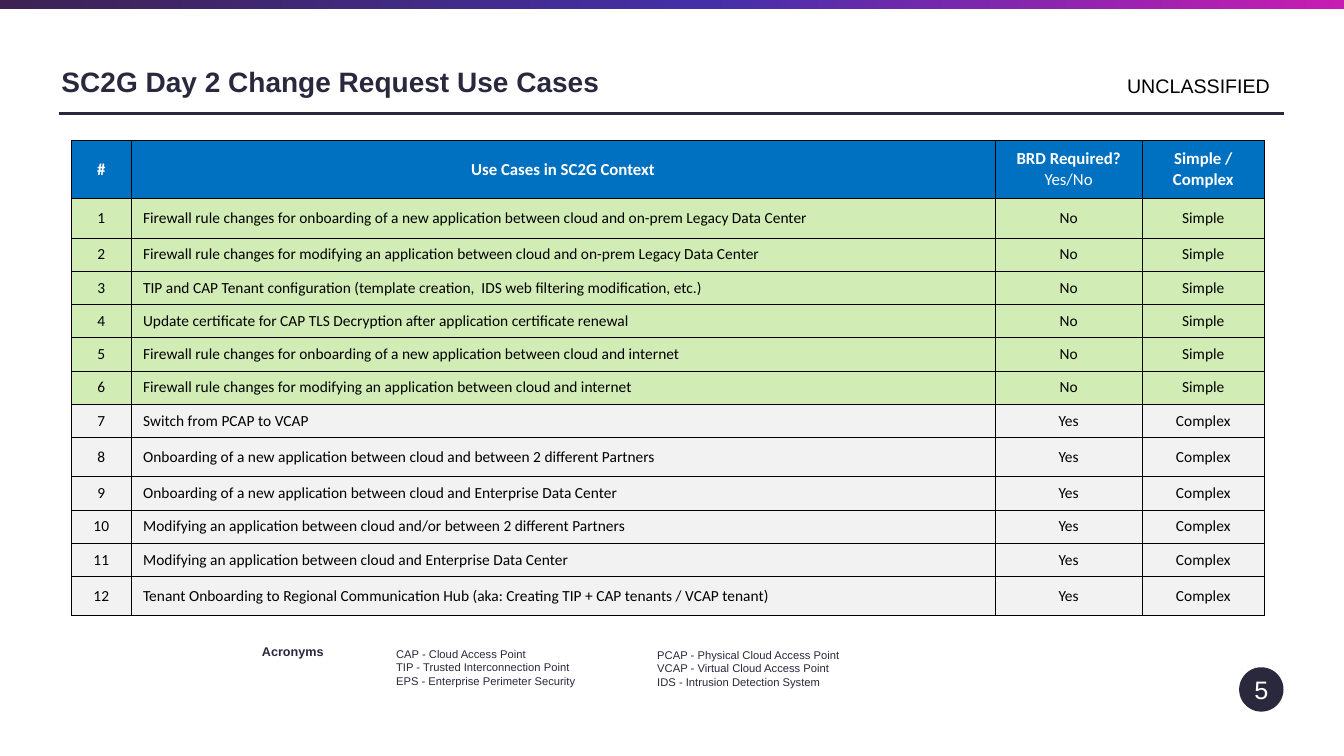
from copy import deepcopy
from dataclasses import dataclass

from lxml.etree import SubElement
from pptx import Presentation
from pptx.dml.color import RGBColor
from pptx.enum.shapes import MSO_CONNECTOR, MSO_SHAPE
from pptx.enum.text import MSO_ANCHOR, MSO_AUTO_SIZE, PP_ALIGN
from pptx.oxml.ns import qn
from pptx.slide import Slide
from pptx.table import _Cell
from pptx.text.text import TextFrame
from pptx.util import Inches, Pt

COLORS = {
    "ink": "2A283C",
    "black": "000000",
    "white": "FFFFFF",
    "header": "0070C0",
    "simple": "D2ECB6",
    "complex": "F2F2F2",
}
BAR_STOPS = [(0, "3D2252"), (0.53, "4530A8"), (1, "C91CB3")]
COLUMN_WIDTHS = [0.59, 8.57, 1.46, 1.21]
HEADER_HEIGHT, ROW_HEIGHT, TALL_ROW_HEIGHT = 0.58, 0.33, 0.39
TALL_ROWS = {1, 8, 12}
HEADERS = ["#", "Use Cases in SC2G Context", "BRD Required?\nYes/No", "Simple /\nComplex"]


@dataclass(frozen=True)
class UseCase:
    text: str
    brd_required: bool = False


@dataclass(frozen=True)
class Label:
    text: str
    left: float
    top: float
    width: float
    height: float
    size: float
    color: str = "ink"
    bold: bool = False


USE_CASES = [
    UseCase("Firewall rule changes for onboarding of a new application between cloud and on-prem Legacy Data Center"),
    UseCase("Firewall rule changes for modifying an application between cloud and on-prem Legacy Data Center"),
    UseCase("TIP and CAP Tenant configuration (template creation,  IDS web filtering modification, etc.)"),
    UseCase("Update certificate for CAP TLS Decryption after application certificate renewal"),
    UseCase("Firewall rule changes for onboarding of a new application between cloud and internet"),
    UseCase("Firewall rule changes for modifying an application between cloud and internet"),
    UseCase("Switch from PCAP to VCAP", True),
    UseCase("Onboarding of a new application between cloud and between 2 different Partners", True),
    UseCase("Onboarding of a new application between cloud and Enterprise Data Center", True),
    UseCase("Modifying an application between cloud and/or between 2 different Partners", True),
    UseCase("Modifying an application between cloud and Enterprise Data Center", True),
    UseCase("Tenant Onboarding to Regional Communication Hub (aka: Creating TIP + CAP tenants / VCAP tenant)", True),
]
LABELS = [
    Label(
        "CAP - Cloud Access Point\nTIP - Trusted Interconnection Point\nEPS - Enterprise Perimeter Security",
        3.83, 6.37, 2.5, 0.5, 8,
    ),
    Label(
        "PCAP - Physical Cloud Access Point\nVCAP - Virtual Cloud Access Point\nIDS - Intrusion Detection System",
        6.42, 6.38, 3.24, 0.5, 8,
    ),
    Label("Acronyms", 2.5, 6.34, 1.3, 0.25, 9, bold=True),
    Label("UNCLASSIFIED", 11.08, 0.68, 1.65, 0.34, 14, "black"),
]


def rgb(name: str) -> RGBColor:
    return RGBColor.from_string(COLORS[name])


def write_text(frame: TextFrame, text: str, *, size: float, color: str = "ink",
               font: str = "Arial", bold: bool = False,
               align: PP_ALIGN = PP_ALIGN.LEFT) -> None:
    for index, line in enumerate(text.split("\n")):
        para = frame.add_paragraph() if index else frame.paragraphs[0]
        para.alignment = align
        span = para.add_run()
        span.text = line
        span.font.name = font
        span.font.size = Pt(size)
        span.font.bold = bold
        span.font.color.rgb = rgb(color)


def clear_margins(target: TextFrame | _Cell) -> None:
    target.margin_left = target.margin_right = 0
    target.margin_top = target.margin_bottom = 0


def add_top_bar(page: Slide) -> None:
    bar = page.shapes.add_shape(MSO_SHAPE.RECTANGLE, 0, 0, Inches(13.33), Inches(0.09))
    bar.shadow.inherit = False
    bar.line.fill.background()
    bar.fill.gradient()
    bar.fill.gradient_angle = 0
    stop_list = bar.element.spPr.find(f".//{qn('a:gsLst')}")
    stop_list.append(deepcopy(stop_list[0]))
    for stop, (position, color) in zip(bar.fill.gradient_stops, BAR_STOPS):
        stop.position = position
        stop.color.rgb = RGBColor.from_string(color)


def add_heading(page: Slide) -> None:
    title = page.shapes.title
    title.left, title.top = Inches(0.61), Inches(0.57)
    title.width, title.height = Inches(12.16), Inches(0.55)
    frame = title.text_frame
    clear_margins(frame)
    frame.auto_size = MSO_AUTO_SIZE.NONE
    frame.vertical_anchor = MSO_ANCHOR.TOP
    write_text(frame, "SC2G Day 2 Change Request Use Cases", size=20, bold=True)
    frame.paragraphs[0].line_spacing = 1.2
    rule = page.shapes.add_connector(
        MSO_CONNECTOR.STRAIGHT, Inches(0.59), Inches(1.13), Inches(12.74), Inches(1.13))
    rule.line.color.rgb = rgb("ink")
    rule.line.width = Pt(2.25)
    SubElement(rule.element.spPr, qn("a:effectLst"))


def add_page_number(page: Slide) -> None:
    badge = page.shapes.add_shape(
        MSO_SHAPE.OVAL, Inches(12.29), Inches(6.62), Inches(0.44), Inches(0.44))
    badge.shadow.inherit = False
    badge.fill.solid()
    badge.fill.fore_color.rgb = rgb("ink")
    badge.line.fill.background()
    clear_margins(badge.text_frame)
    badge.text_frame.vertical_anchor = MSO_ANCHOR.MIDDLE
    write_text(badge.text_frame, "5", size=18, color="white", align=PP_ALIGN.CENTER)


def add_label(page: Slide, label: Label) -> None:
    box = page.shapes.add_textbox(
        Inches(label.left), Inches(label.top), Inches(label.width), Inches(label.height))
    frame = box.text_frame
    frame.word_wrap = True
    write_text(frame, label.text, size=label.size, color=label.color, bold=label.bold)


def format_cell(cell: _Cell, fill: str) -> None:
    properties = cell._tc.get_or_add_tcPr()
    for side in ("lnL", "lnR", "lnT", "lnB"):
        border = SubElement(properties, qn(f"a:{side}"), w=str(Pt(0.5)))
        SubElement(SubElement(border, qn("a:solidFill")), qn("a:srgbClr"), val=COLORS["black"])
    cell.fill.solid()
    cell.fill.fore_color.rgb = rgb(fill)
    cell.vertical_anchor = MSO_ANCHOR.MIDDLE
    clear_margins(cell)


def add_use_case_table(page: Slide) -> None:
    heights = [HEADER_HEIGHT] + [
        TALL_ROW_HEIGHT if number in TALL_ROWS else ROW_HEIGHT
        for number in range(1, len(USE_CASES) + 1)
    ]
    table = page.shapes.add_table(
        len(heights), len(COLUMN_WIDTHS), Inches(0.71), Inches(1.39),
        Inches(sum(COLUMN_WIDTHS)), Inches(sum(heights))).table
    table.horz_banding = False
    for column, width in zip(table.columns, COLUMN_WIDTHS):
        column.width = Inches(width)
    for row, height in zip(table.rows, heights):
        row.height = Inches(height)

    for column, text in enumerate(HEADERS):
        cell = table.cell(0, column)
        format_cell(cell, "header")
        write_text(cell.text_frame, text, size=12, color="white", font="Calibri",
                   bold=True, align=PP_ALIGN.CENTER)
    table.cell(0, 2).text_frame.paragraphs[1].runs[0].font.bold = False

    for number, case in enumerate(USE_CASES, start=1):
        answer, level = ("Yes", "Complex") if case.brd_required else ("No", "Simple")
        for column, text in enumerate([str(number), case.text, answer, level]):
            cell = table.cell(number, column)
            format_cell(cell, level.lower())
            is_description = column == 1
            if is_description:
                cell.margin_left = Inches(0.12)
            write_text(cell.text_frame, text, size=11, color="black", font="Calibri",
                       align=PP_ALIGN.LEFT if is_description else PP_ALIGN.CENTER)


def main() -> None:
    deck = Presentation()
    deck.slide_width, deck.slide_height = Inches(13.33), Inches(7.5)
    page = deck.slides.add_slide(deck.slide_layouts[5])
    add_top_bar(page)
    add_heading(page)
    add_page_number(page)
    for label in LABELS:
        add_label(page, label)
    add_use_case_table(page)
    deck.save("out.pptx")


if __name__ == "__main__":
    main()
